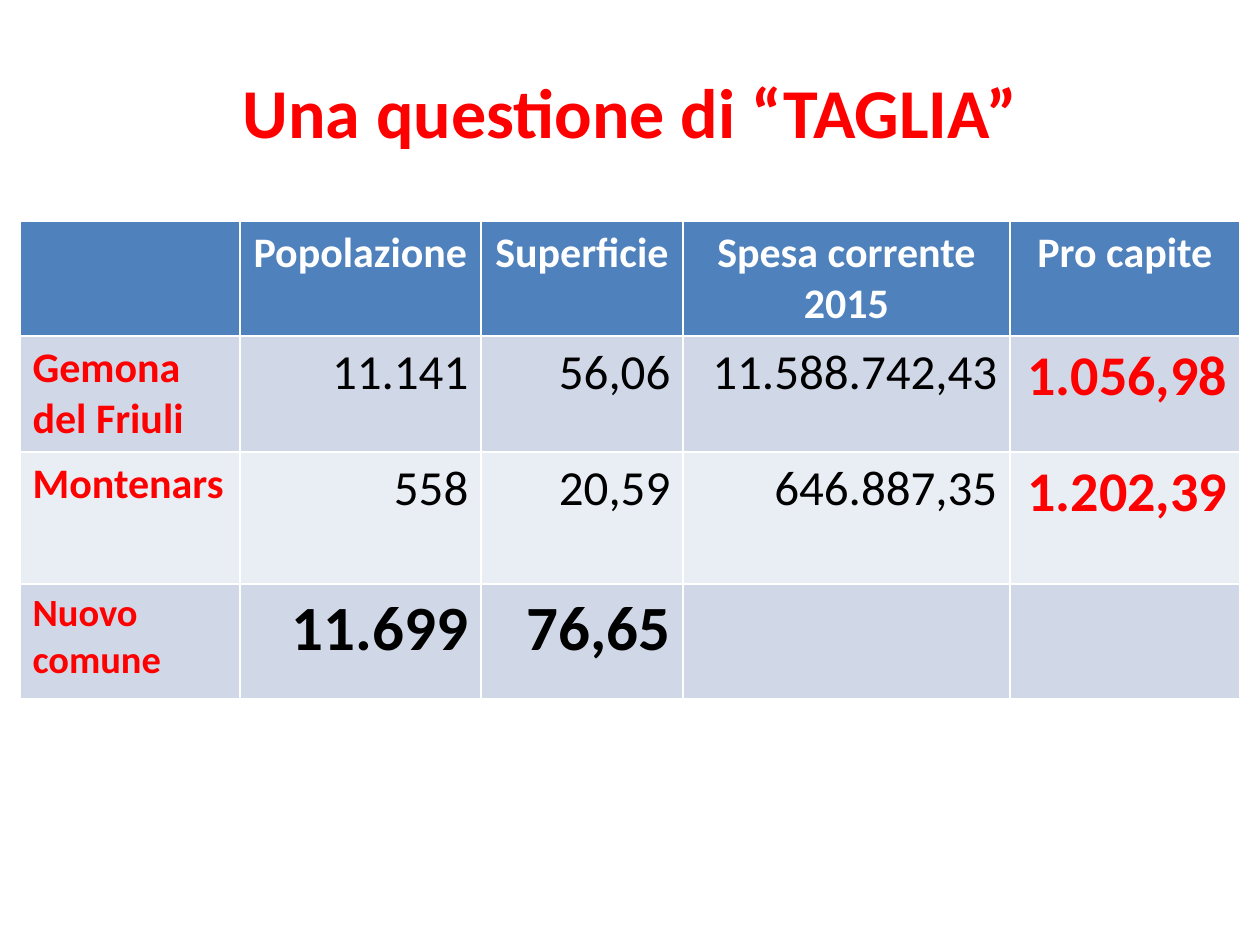
from pptx import Presentation
from pptx.dml.color import RGBColor
from pptx.enum.text import MSO_ANCHOR, PP_ALIGN
from pptx.util import Pt

EMU_PER_PX = 914400 / 126
FONT = "Calibri"
RED = RGBColor(0xFF, 0x00, 0x00)
BLACK = RGBColor(0x00, 0x00, 0x00)
WHITE = RGBColor(0xFF, 0xFF, 0xFF)
BLUE = RGBColor(0x4F, 0x81, 0xBD)
BAND_DARK = RGBColor(0xD0, 0xD8, 0xE8)
BAND_LIGHT = RGBColor(0xE9, 0xED, 0xF4)

COL_WIDTHS = [220, 241, 202, 327, 230]
ROW_HEIGHTS = [114, 116, 132, 115]
ROWS = [
    ["", "Popolazione", "Superficie", "Spesa corrente\n2015", "Pro capite"],
    ["Gemona del Friuli", "11.141", "56,06", "11.588.742,43", "1.056,98"],
    ["Montenars", "558", "20,59", "646.887,35", "1.202,39"],
    ["Nuovo comune", "11.699", "76,65", "", ""],
]

HEADER = dict(size=24, color=WHITE, bold=True, align=PP_ALIGN.CENTER)
LABEL = dict(size=24, color=RED, bold=True, align=PP_ALIGN.LEFT)
VALUE = dict(size=28, color=BLACK, bold=False, align=PP_ALIGN.RIGHT)
PER_HEAD = dict(size=32, color=RED, bold=True, align=PP_ALIGN.RIGHT)
TOTAL = dict(size=36, color=BLACK, bold=True, align=PP_ALIGN.RIGHT)
TITLE = dict(size=40, color=RED, bold=True, align=PP_ALIGN.CENTER)
BODY_ROW = [LABEL, VALUE, VALUE, VALUE, PER_HEAD]
TOTAL_ROW = [{**LABEL, "size": 22}] + [TOTAL] * 4
FORMATS = [[HEADER] * 5, BODY_ROW, BODY_ROW, TOTAL_ROW]
FILLS = [BLUE, BAND_DARK, BAND_LIGHT, BAND_DARK]


def px(n):
    return round(n * EMU_PER_PX)


def write(tf, text, size, color, bold, align):
    tf.text = text
    for p in tf.paragraphs:
        p.alignment = align
        for r in p.runs:
            for name, value in dict(name=FONT, size=Pt(size), bold=bold).items():
                setattr(r.font, name, value)
            r.font.color.rgb = color


def add_title(s, left, top, width, height):
    sp = s.shapes.title
    box = dict(left=left, top=top, width=width, height=height)
    for name, value in box.items():
        setattr(sp, name, px(value))
    write(sp.text_frame, "Una questione di “TAGLIA”", **TITLE)
    sp.text_frame.vertical_anchor = MSO_ANCHOR.MIDDLE


def add_figures(s, left, top):
    frame = s.shapes.add_table(
        len(ROWS), len(COL_WIDTHS), px(left), px(top),
        px(sum(COL_WIDTHS)), px(sum(ROW_HEIGHTS)))
    table = frame.table
    for col, width in zip(table.columns, COL_WIDTHS):
        col.width = px(width)
    for row, height, texts, formats, fill in zip(
            table.rows, ROW_HEIGHTS, ROWS, FORMATS, FILLS):
        row.height = px(height)
        for cell, text, fmt in zip(row.cells, texts, formats):
            cell.fill.solid()
            cell.fill.fore_color.rgb = fill
            write(cell.text_frame, text, **fmt)


def main():
    prs = Presentation()
    prs.slide_width, prs.slide_height = px(1260), px(945)
    s = prs.slides.add_slide(prs.slide_layouts[5])
    add_title(s, 63, 32, 1134, 157)
    add_figures(s, 20, 221)
    prs.save("out.pptx")


if __name__ == "__main__":
    main()
